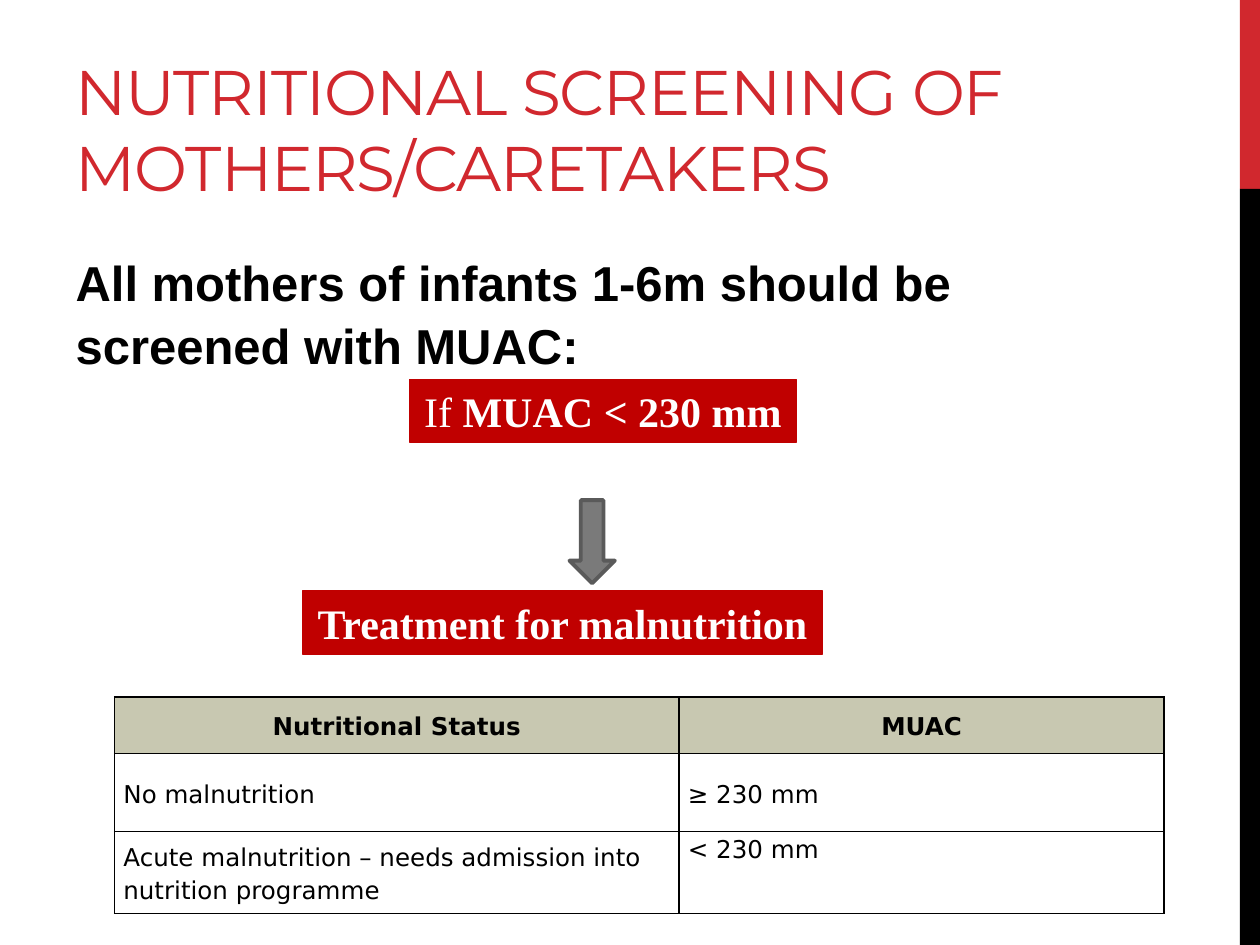
"""Build the slide on nutritional screening of mothers and caretakers."""
import pptx
import pptx.util
import pptx.dml.color
import pptx.enum.shapes
import pptx.enum.text
import pptx.oxml
import pptx.oxml.ns

Pt = pptx.util.Pt
RGBColor = pptx.dml.color.RGBColor
SHAPE = pptx.enum.shapes.MSO_SHAPE
ALIGN = pptx.enum.text.PP_ALIGN
ANCHOR = pptx.enum.text.MSO_ANCHOR
AUTO = pptx.enum.text.MSO_AUTO_SIZE

RED = RGBColor(0xD1, 0x28, 0x2E)
DARK_RED = RGBColor(0xC0, 0x00, 0x00)
BLACK = RGBColor(0x00, 0x00, 0x00)
WHITE = RGBColor(0xFF, 0xFF, 0xFF)
GRAY = RGBColor(0x7A, 0x7A, 0x7A)
DARK_GRAY = RGBColor(0x5A, 0x5A, 0x5A)
BEIGE = RGBColor(0xC8, 0xC8, 0xB1)

prs = pptx.Presentation()
prs.slide_width = pptx.util.Inches(10)
prs.slide_height = pptx.util.Inches(7.5)
UNIT = prs.slide_width / 100
s = prs.slides.add_slide(prs.slide_layouts[1])


def box(*shares):
    """Turn hundredths of the slide width into lengths."""
    return [round(n * UNIT) for n in shares]


def add_run(p, text, size, name, color, bold=False):
    """Add one formatted run to a paragraph."""
    r = p.add_run()
    r.text = text
    for key, value in {"size": Pt(size), "name": name, "bold": bold}.items():
        setattr(r.font, key, value)
    r.font.color.rgb = color
    return r


for top, height, color in [(0, 15, RED), (15, 60, BLACK)]:
    sp = s.shapes.add_shape(SHAPE.RECTANGLE, *box(98.4, top, 1.6, height))
    sp.shadow.inherit = False
    sp.fill.solid()
    sp.fill.fore_color.rgb = color
    sp.line.fill.background()

title, body = s.placeholders
for sp, area, anchor in [(title, (5, 1.7, 92.2, 15), ANCHOR.BOTTOM),
                         (body, (5, 19.2, 83.3, 47.8), ANCHOR.TOP)]:
    for key, value in zip(("left", "top", "width", "height"), box(*area)):
        setattr(sp, key, value)
    tf = sp.text_frame
    for key, value in {"word_wrap": True, "auto_size": AUTO.NONE,
                       "vertical_anchor": anchor}.items():
        setattr(tf, key, value)
    tf.paragraphs[0].alignment = ALIGN.LEFT

r = add_run(title.text_frame.paragraphs[0],
            "NUTRITIONAL SCREENING OF MOTHERS/CARETAKERS", 36, "Montserrat", RED)
r.font._element.set("spc", "-60")

p = body.text_frame.paragraphs[0]
for key, value in {"line_spacing": 1.07, "space_before": Pt(0), "space_after": Pt(6)}.items():
    setattr(p, key, value)
pPr = p._p.get_or_add_pPr()
pPr.set("marL", "0")
pPr.set("indent", "0")
pPr.append(pptx.oxml.parse_xml(f'<a:buNone {pptx.oxml.ns.nsdecls("a")}/>'))
add_run(p, "All mothers of infants 1-6m should be screened with MUAC:", 28, "Arial", BLACK, True)

for kind, area, fill, line, width, runs in [
    (SHAPE.RECTANGLE, (24, 46.9, 41.3, 5), DARK_RED, DARK_RED, 0.75,
     [("Treatment for malnutrition", True)]),
    (SHAPE.RECTANGLE, (32.5, 30.1, 30.7, 5), DARK_RED, DARK_RED, 0.75,
     [("If ", False), ("MUAC < 230 mm", True)]),
    (SHAPE.DOWN_ARROW, (45.2, 39.7, 3.6, 6.6), GRAY, DARK_GRAY, 2.25, []),
]:
    sp = s.shapes.add_shape(kind, *box(*area))
    sp.shadow.inherit = False
    sp.fill.solid()
    sp.fill.fore_color.rgb = fill
    sp.line.color.rgb = line
    sp.line.width = Pt(width)
    tf = sp.text_frame
    tf.word_wrap = False
    tf.paragraphs[0].alignment = ALIGN.CENTER
    for text, bold in runs:
        add_run(tf.paragraphs[0], text, 24, "Times New Roman", WHITE, bold)

rows = [
    ("Nutritional Status", "MUAC"),
    ("No malnutrition", "≥ 230 mm"),
    ("Acute malnutrition – needs admission into nutrition programme", "< 230 mm"),
]
table = s.shapes.add_table(3, 2, *box(9.1, 55.3, 83.3, 17.2)).table
table.first_row = table.horz_banding = False
for col, width in zip(table.columns, box(44.8, 38.5)):
    col.width = width
for row, height in zip(table.rows, box(4.5, 6.2, 6.5)):
    row.height = height

side, none = box(0.7, 0)
for i, texts in enumerate(rows):
    for j, text in enumerate(texts):
        cell = table.cell(i, j)
        header = i == 0
        for key, value in {
            "margin_left": side, "margin_right": side, "margin_top": none, "margin_bottom": none,
            "vertical_anchor": ANCHOR.TOP if (i, j) == (2, 1) else ANCHOR.MIDDLE,
        }.items():
            setattr(cell, key, value)
        tcPr = cell._tc.get_or_add_tcPr()
        for edge in "LRTB":
            tcPr.append(pptx.oxml.parse_xml(
                f'<a:ln{edge} {pptx.oxml.ns.nsdecls("a")} w="{Pt(1)}"><a:solidFill>'
                f'<a:srgbClr val="{BLACK}"/></a:solidFill></a:ln{edge}>'))
        cell.fill.solid()
        cell.fill.fore_color.rgb = BEIGE if header else WHITE
        p = cell.text_frame.paragraphs[0]
        p.alignment = ALIGN.CENTER if header else ALIGN.LEFT
        p.line_spacing = 1.15
        add_run(p, text, 14, "DejaVu Sans", BLACK, header)

prs.save("out.pptx")
